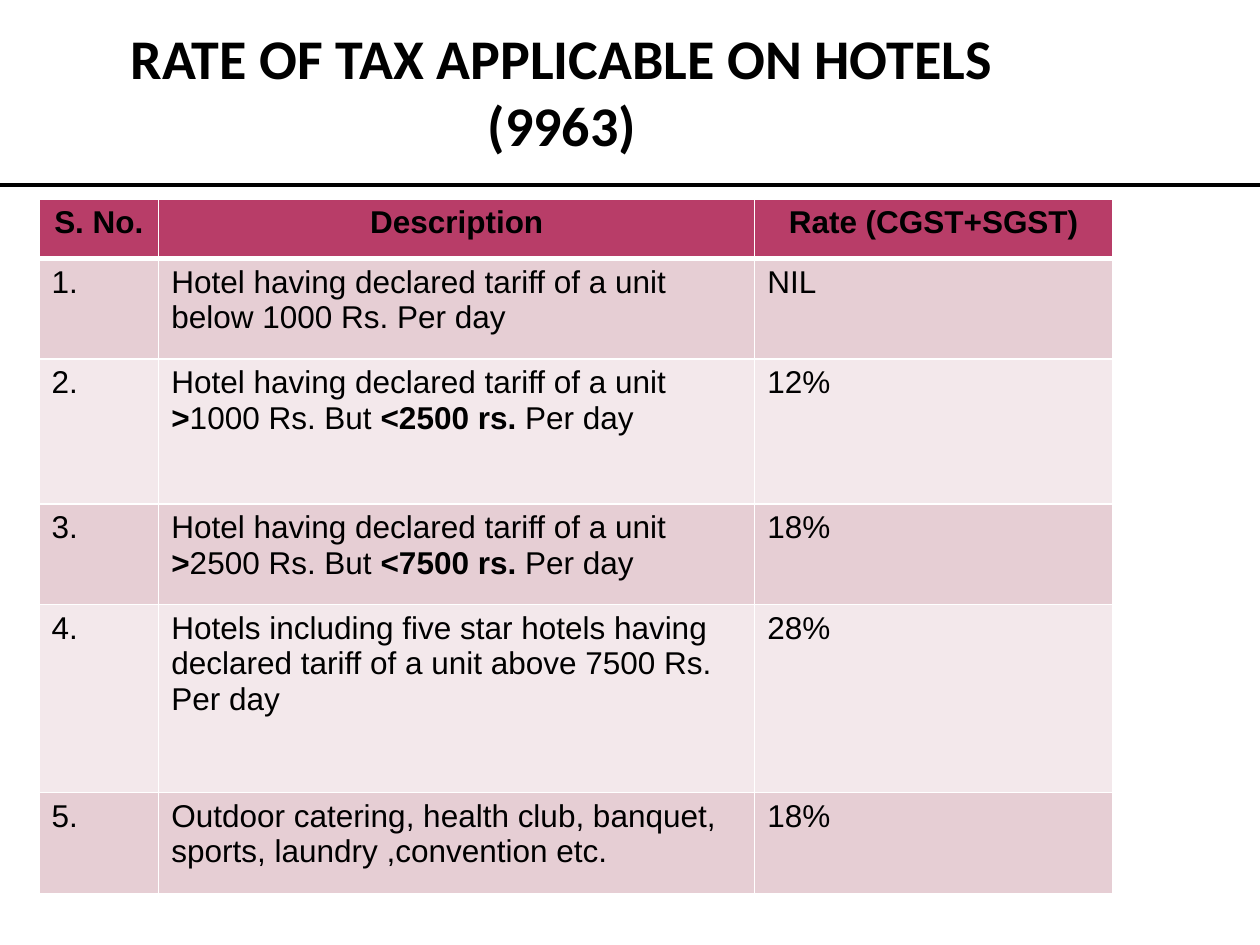
from lxml.etree import SubElement
from pptx import Presentation
from pptx.dml.color import RGBColor
from pptx.enum.shapes import MSO_CONNECTOR as Connector
from pptx.enum.text import MSO_ANCHOR as Anchor, MSO_AUTO_SIZE as AutoSize, PP_ALIGN as Align
from pptx.oxml.ns import qn
from pptx.util import Inches, Pt

WIDTH, HEIGHT = 10, 7.5
BLACK, WHITE = "000000", "FFFFFF"
HEADER, BAND_DARK, BAND_LIGHT = "B83D68", "E6CED4", "F3E8EB"

COLUMNS = [0.95, 4.73, 2.84]
ROWS = [0.47, 0.8, 1.15, 0.8, 1.49, 0.8]

# Text between ** marks is bold
TAX_RATES = [
    ("**S. No.**", "**Description**", "**Rate (CGST+SGST)**"),
    ("1.", "Hotel having declared tariff of a unit below 1000 Rs. Per day", "NIL"),
    ("2.", "Hotel having declared tariff of a unit **>**1000 Rs. But **<2500 rs. **Per day", "12%"),
    ("3.", "Hotel having declared tariff of a unit **>**2500 Rs. But **<7500 rs. **Per day", "18%"),
    ("4.", "Hotels including five star hotels having declared tariff of a unit "
           "above 7500 Rs. Per day", "28%"),
    ("5.", "Outdoor catering, health club, banquet, sports, laundry ,convention etc.", "18%"),
]


def color(value):
    return RGBColor.from_string(value)


def write_text(frame, text, font="Arial", size=18, fill=BLACK, align=Align.LEFT):
    paragraph = frame.paragraphs[0]
    paragraph.alignment = align
    for index, part in enumerate(text.split("**")):
        if part:
            run = paragraph.add_run()
            run.text = part
            run.font.name, run.font.size = font, Pt(size)
            run.font.bold = index % 2 == 1
            run.font.color.rgb = color(fill)


def add_title(slide, text):
    title = slide.shapes.title
    title.left, title.top = Inches(0.05 * WIDTH), Inches(0.35)
    title.width, title.height = Inches(7.92), Inches(0.12 * HEIGHT)
    frame = title.text_frame
    frame.word_wrap, frame.auto_size = True, AutoSize.NONE
    frame.vertical_anchor = Anchor.BOTTOM
    frame.margin_left = frame.margin_right = Inches(0.05)
    frame.margin_top = frame.margin_bottom = 0
    write_text(frame, text, font="Calibri", size=32, align=Align.CENTER)


def set_borders(cell, **widths):
    properties = cell._tc.get_or_add_tcPr()
    for position, (side, width) in enumerate(widths.items()):
        line = SubElement(properties, qn(f"a:ln{side}"), w=str(Pt(width)))
        fill = SubElement(line, qn("a:solidFill"))
        SubElement(fill, qn("a:srgbClr"), val=WHITE)
        properties.insert(position, line)  # borders come before the fill


def add_rate_table(slide, left, top):
    table = slide.shapes.add_table(
        len(ROWS), len(COLUMNS), Inches(left), Inches(top),
        Inches(sum(COLUMNS)), Inches(sum(ROWS))).table
    for column, width in zip(table.columns, COLUMNS):
        column.width = Inches(width)
    for row, height in zip(table.rows, ROWS):
        row.height = Inches(height)
    for row_index, texts in enumerate(TAX_RATES):
        is_header = row_index == 0
        band = HEADER if is_header else BAND_DARK if row_index % 2 else BAND_LIGHT
        for column_index, text in enumerate(texts):
            cell = table.cell(row_index, column_index)
            cell.fill.solid()
            cell.fill.fore_color.rgb = color(band)
            set_borders(cell, L=1, R=1, T=3 if row_index == 1 else 1, B=3 if is_header else 1)
            write_text(cell.text_frame, text, align=Align.CENTER if is_header else Align.LEFT)


def add_rule(slide, y, width):
    rule = slide.shapes.add_connector(
        Connector.STRAIGHT, 0, Inches(y), Inches(WIDTH), Inches(y))
    rule.line.color.rgb = color(BLACK)
    rule.line.width = Pt(width)
    SubElement(rule._element.spPr, qn("a:effectLst"))


def main():
    presentation = Presentation()
    presentation.slide_width, presentation.slide_height = Inches(WIDTH), Inches(HEIGHT)
    slide = presentation.slides.add_slide(presentation.slide_layouts[5])
    add_title(slide, "**RATE OF TAX APPLICABLE ON HOTELS (9963)**")
    add_rate_table(slide, 0.31, 1.58)
    add_rule(slide, 1.47, 2.5)
    presentation.save("out.pptx")


if __name__ == "__main__":
    main()
